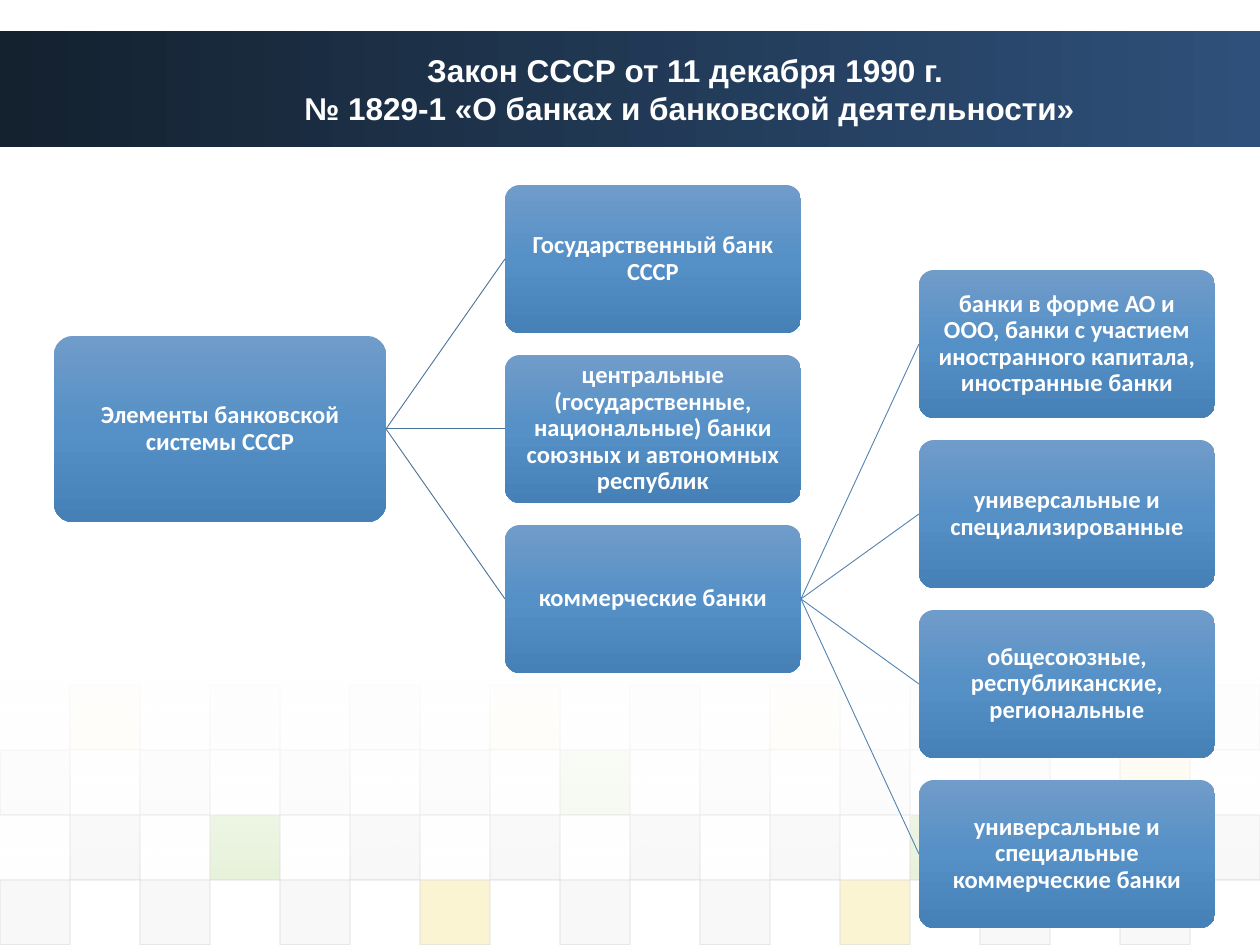
from lxml.etree import SubElement
from pptx import Presentation
from pptx.dml.color import RGBColor
from pptx.enum.shapes import MSO_CONNECTOR, MSO_SHAPE
from pptx.enum.text import MSO_ANCHOR, PP_ALIGN
from pptx.oxml.ns import qn
from pptx.util import Inches, Pt

PX = 7257  # EMU in one px, at 126 px to the inch

WHITE = RGBColor(0xFF, 0xFF, 0xFF)
BANNER_DARK = RGBColor(0x14, 0x21, 0x2F)
BANNER_LIGHT = RGBColor(0x2E, 0x50, 0x7A)
NODE_TOP = RGBColor(0x70, 0x9C, 0xC9)
NODE_MIDDLE = RGBColor(0x55, 0x90, 0xC7)
NODE_BOTTOM = RGBColor(0x45, 0x80, 0xB7)
FIRST_LINK = RGBColor(0x48, 0x73, 0x9B)
SECOND_LINK = RGBColor(0x52, 0x83, 0xB0)
GRAY = RGBColor(0xDD, 0xDD, 0xDD)
TILE_COLORS = {
    "D": GRAY,
    "E": RGBColor(0xEA, 0xEA, 0xEA),
    "G": RGBColor(0x8A, 0xC2, 0x46),
    "Y": RGBColor(0xEF, 0xC8, 0x21),
}


def add_box(left, top, width, height, stops, angle=90, kind=MSO_SHAPE.RECTANGLE):
    """Add a shape without outline; stops are (percent, color, opacity percent)."""
    shape = slide.shapes.add_shape(kind, left * PX, top * PX, width * PX, height * PX)
    shape.shadow.inherit = False
    shape.line.fill.background()
    shape.fill.gradient()
    shape.fill.gradient_angle = (360 - angle) % 360
    stop_list = shape._element.spPr.find(qn("a:gradFill")).find(qn("a:gsLst"))
    for stop in list(stop_list):
        stop_list.remove(stop)
    for percent, color, opacity in stops:
        stop = SubElement(stop_list, qn("a:gs"), pos=str(percent * 1000))
        value = SubElement(stop, qn("a:srgbClr"), val=str(color))
        if opacity < 100:
            SubElement(value, qn("a:alpha"), val=str(opacity * 1000))
    return shape


def write_text(shape, text, size=14, font="Calibri", margin=6, spacing=0.9):
    frame = shape.text_frame
    frame.word_wrap = True
    frame.vertical_anchor = MSO_ANCHOR.MIDDLE
    frame.margin_left = frame.margin_right = margin * PX
    frame.margin_top = frame.margin_bottom = margin * PX
    paragraph = frame.paragraphs[0]
    paragraph.text = text
    paragraph.alignment = PP_ALIGN.CENTER
    paragraph.line_spacing = spacing
    for run in paragraph.runs:
        run.font.name = font
        run.font.size = Pt(size)
        run.font.bold = True
        run.font.color.rgb = WHITE


presentation = Presentation()
presentation.slide_width = Inches(10)
presentation.slide_height = Inches(7.5)
slide = presentation.slides.add_slide(presentation.slide_layouts[6])

# Banner
add_box(0, 31, 1260, 116, [(0, BANNER_DARK, 100), (100, BANNER_LIGHT, 100)], angle=0)

# Checkerboard: first column, opacity and tile colors of each row
TILE_ROWS = [
    (1, 5, "YEEYDYEGE"),
    (0, 10, "DDDDGDDDY"),
    (1, 20, "DGDDDDGDD"),
    (0, 20, "DDDYDDYDD"),
]
for row, (first_column, opacity, letters) in enumerate(TILE_ROWS):
    for index, letter in enumerate(letters):
        column = first_column + 2 * index
        tile = slide.shapes.add_shape(
            MSO_SHAPE.RECTANGLE, column * 70 * PX, (685 + row * 65) * PX, 70 * PX, 65 * PX)
        tile.shadow.inherit = False
        tile.fill.solid()
        tile.fill.fore_color.rgb = TILE_COLORS[letter]
        tile.line.color.rgb = GRAY
        tile.line.width = Pt(0.75)
        fill_value, line_value = tile._element.spPr.iter(qn("a:srgbClr"))
        SubElement(fill_value, qn("a:alpha"), val=str(opacity * 1000))
        SubElement(line_value, qn("a:alpha"), val="60000")

# White veil that fades out downwards
add_box(0, 677, 1260, 204, [(0, WHITE, 90), (100, WHITE, 0)])

# Title
title = slide.shapes.add_textbox(144 * PX, 31 * PX, 1091 * PX, 116 * PX)
write_text(title, "Закон СССР от 11 декабря 1990 г. \v№ 1829-1 «О банках и банковской деятельности»",
           size=18, font="Arial", spacing=1.0)

# Tree: each level is centred on the end of its parent
NODE_STOPS = [(0, NODE_TOP, 100), (50, NODE_MIDDLE, 100), (100, NODE_BOTTOM, 100)]
NODE_WIDTH, NODE_HEIGHT, NODE_PITCH = 296, 148, 170
LEVELS = [
    (505, (386, 429), FIRST_LINK, [
        "Государственный банк СССР",
        "центральные (государственные, национальные) банки союзных и автономных республик",
        "коммерческие банки",
    ]),
    (919, (801, 599), SECOND_LINK, [
        "банки в форме АО и ООО, банки с участием иностранного капитала, иностранные банки",
        "универсальные и специализированные",
        "общесоюзные, республиканские, региональные",
        "универсальные и специальные коммерческие банки",
    ]),
]
root = add_box(54, 336, 332, 186, NODE_STOPS, kind=MSO_SHAPE.ROUNDED_RECTANGLE)
root.adjustments[0] = 0.1
write_text(root, "Элементы банковской системы СССР")

for left, (parent_x, parent_y), link_color, labels in LEVELS:
    first_middle = parent_y - (len(labels) - 1) * NODE_PITCH // 2
    for index, label in enumerate(labels):
        middle = first_middle + index * NODE_PITCH
        link = slide.shapes.add_connector(
            MSO_CONNECTOR.STRAIGHT, parent_x * PX, parent_y * PX, left * PX, middle * PX)
        link.line.color.rgb = link_color
        link.line.width = Pt(0.5)
        SubElement(link._element.spPr, qn("a:effectLst"))
        node = add_box(left, middle - NODE_HEIGHT // 2, NODE_WIDTH, NODE_HEIGHT,
                       NODE_STOPS, kind=MSO_SHAPE.ROUNDED_RECTANGLE)
        node.adjustments[0] = 0.1
        write_text(node, label)

presentation.save("out.pptx")
